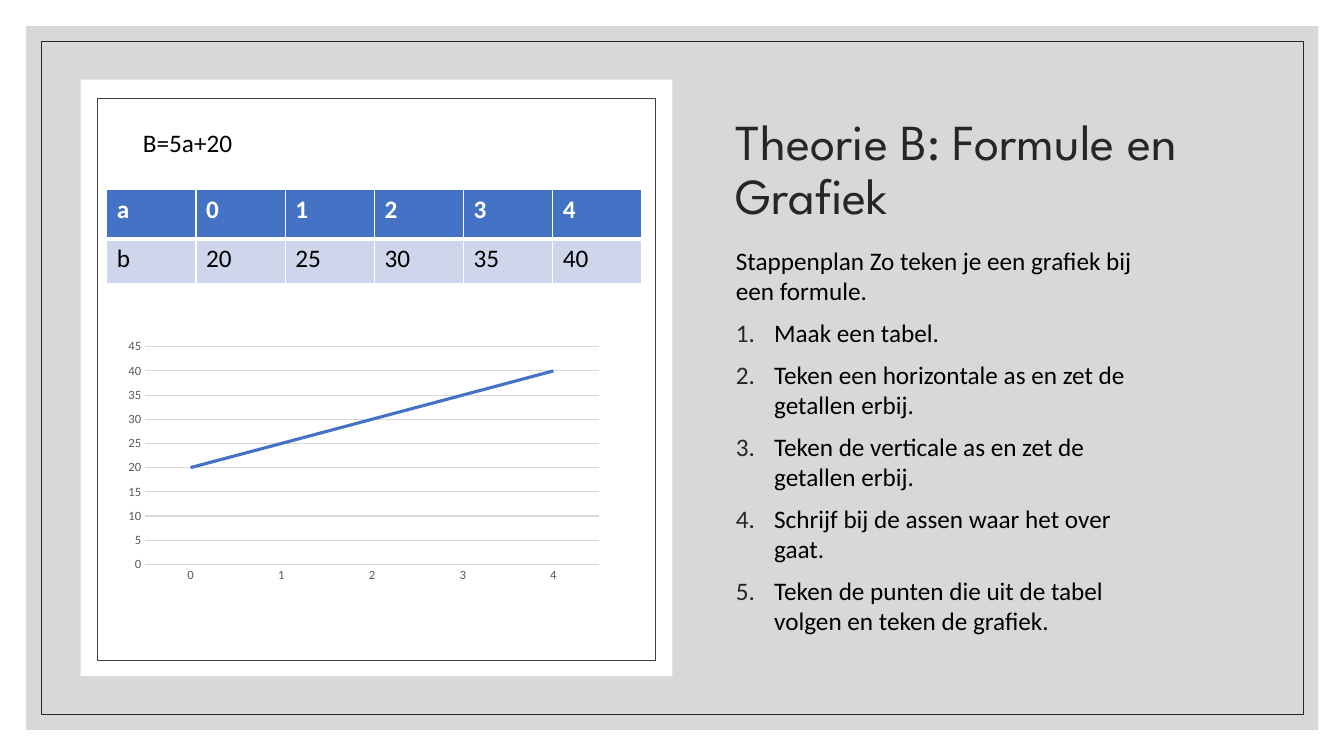
from dataclasses import dataclass

import lxml.etree
import pptx
import pptx.chart.data
import pptx.dml.color
import pptx.enum.chart
import pptx.enum.shapes
import pptx.enum.text
import pptx.oxml
import pptx.oxml.ns
import pptx.util

qn = pptx.oxml.ns.qn


@dataclass(frozen=True)
class Theme:
    heading_font: str = "League Spartan"
    font: str = "Calibri"
    title_size: int = 36
    text_size: int = 18
    axis_size: int = 9
    ink: str = "000000"
    dark: str = "262626"
    border: str = "404040"
    axis: str = "595959"
    grid: str = "D9D9D9"
    backdrop: str = "BFBFBF"
    white: str = "FFFFFF"
    accent: str = "4472C4"
    band: str = "CFD5EA"


def rgb(value):
    return pptx.dml.color.RGBColor.from_string(value)


class SlideBuilder:
    """Places elements by percentage of the slide's width and height."""

    def __init__(self, prs, theme):
        self.prs, self.theme = prs, theme
        self.s = prs.slides.add_slide(prs.slide_layouts[1])

    def x(self, share):
        return round(self.prs.slide_width * share / 100)

    def y(self, share):
        return round(self.prs.slide_height * share / 100)

    def box(self, left, top, width, height):
        return self.x(left), self.y(top), self.x(width), self.y(height)

    def run(self, p, text, size=None, color=None, font=None, bold=False):
        r = p.add_run()
        r.text = text
        r.font.size = pptx.util.Pt(size or self.theme.text_size)
        r.font.name = font or self.theme.font
        r.font.bold = bold
        r.font.color.rgb = rgb(color or self.theme.ink)

    def panel(self, area, fill=None, alpha=None, line=None):
        sp = self.s.shapes.add_shape(pptx.enum.shapes.MSO_SHAPE.RECTANGLE, *self.box(*area))
        sp.shadow.inherit = False
        if fill:
            sp.fill.solid()
            sp.fill.fore_color.rgb = rgb(fill)
        else:
            sp.fill.background()
        if alpha:
            color = sp.element.spPr.find(qn("a:solidFill")).find(qn("a:srgbClr"))
            lxml.etree.SubElement(color, qn("a:alpha"), val=str(alpha * 1000))
        if line:
            sp.line.color.rgb = rgb(line)
            sp.line.width = pptx.util.Pt(0.5)
        else:
            sp.line.fill.background()

    def placeholder(self, idx, area, anchor):
        sp = self.s.placeholders[idx]
        self.s.shapes.element.append(sp.element)  # bring in front of the panels
        sp.left, sp.top, sp.width, sp.height = self.box(*area)
        tf = sp.text_frame
        tf.word_wrap = True
        tf.auto_size = pptx.enum.text.MSO_AUTO_SIZE.NONE
        tf.vertical_anchor = anchor
        return tf

    def title(self, text, area):
        p = self.placeholder(0, area, pptx.enum.text.MSO_ANCHOR.MIDDLE).paragraphs[0]
        p.alignment = pptx.enum.text.PP_ALIGN.LEFT
        p.line_spacing = 0.9
        self.run(p, text, self.theme.title_size, self.theme.dark, self.theme.heading_font)

    def steps(self, intro, items, area):
        tf = self.placeholder(1, area, pptx.enum.text.MSO_ANCHOR.TOP)
        for i, text in enumerate([intro, *items]):
            p = tf.add_paragraph() if i else tf.paragraphs[0]
            p.space_before = pptx.util.Pt(9)
            p.line_spacing = 0.98
            self.run(p, text)
            indent = pptx.util.Inches(0.38) if i else 0
            pPr = p._p.get_or_add_pPr()
            pPr.set("marL", str(indent))
            pPr.set("indent", str(-indent))
            if i:
                color = lxml.etree.SubElement(pPr, qn("a:buClr"))
                lxml.etree.SubElement(color, qn("a:srgbClr"), val=self.theme.dark)
                lxml.etree.SubElement(pPr, qn("a:buFont"), typeface="+mj-lt")
                lxml.etree.SubElement(pPr, qn("a:buAutoNum"), type="arabicPeriod")
            else:
                lxml.etree.SubElement(pPr, qn("a:buNone"))

    def text(self, text, area):
        tf = self.s.shapes.add_textbox(*self.box(*area)).text_frame
        tf.word_wrap = True
        tf.auto_size = pptx.enum.text.MSO_AUTO_SIZE.SHAPE_TO_FIT_TEXT
        self.run(tf.paragraphs[0], text)

    def cell(self, cell, text, header):
        t = self.theme
        tcPr = cell._tc.get_or_add_tcPr()
        thick = "b" if header else "t"
        for side in "lrtb":
            width = pptx.util.Pt(3 if side == thick else 1)
            ln = lxml.etree.SubElement(tcPr, qn(f"a:ln{side.upper()}"), w=str(width))
            fill = lxml.etree.SubElement(ln, qn("a:solidFill"))
            lxml.etree.SubElement(fill, qn("a:srgbClr"), val=t.white)
        cell.fill.solid()
        cell.fill.fore_color.rgb = rgb(t.accent if header else t.band)
        self.run(cell.text_frame.paragraphs[0], text,
                 color=t.white if header else t.ink, bold=header)

    def table(self, rows, left, top, width, heights):
        area = self.box(left, top, width, sum(heights))
        table = self.s.shapes.add_table(len(rows), len(rows[0]), *area).table
        for i, (row, height) in enumerate(zip(rows, heights)):
            table.rows[i].height = self.y(height)
            for j, value in enumerate(row):
                self.cell(table.cell(i, j), str(value), header=i == 0)

    def line_chart(self, cats, values, area, plot_area):
        t, xl = self.theme, pptx.enum.chart
        data = pptx.chart.data.CategoryChartData()
        data.categories = [str(c) for c in cats]
        data.add_series("Series 1", values)
        chart = self.s.shapes.add_chart(xl.XL_CHART_TYPE.LINE, *self.box(*area), data).chart
        chart.has_legend = chart.has_title = False
        chart.font.size, chart.font.name = pptx.util.Pt(10), t.font
        chart.font.color.rgb = rgb(t.ink)
        chart.plots[0].vary_by_categories = False

        # Series line
        series = chart.plots[0].series[0]
        series.smooth = False
        series.marker.style = xl.XL_MARKER_STYLE.NONE
        series.format.line.color.rgb = rgb(t.accent)
        series.format.line.width = pptx.util.Pt(2.25)

        # Axes and gridlines
        cat, val = chart.category_axis, chart.value_axis
        for axis in (cat, val):
            axis.major_tick_mark = axis.minor_tick_mark = xl.XL_TICK_MARK.NONE
            font = axis.tick_labels.font
            font.size, font.name = pptx.util.Pt(t.axis_size), t.font
            font.color.rgb = rgb(t.axis)
        val.minimum_scale, val.maximum_scale, val.major_unit = 0, 45, 5
        val.format.line.fill.background()
        val.has_major_gridlines = True
        for line in (cat.format.line, val.major_gridlines.format.line):
            line.color.rgb = rgb(t.grid)
            line.width = pptx.util.Pt(0.75)

        # Inner plot area
        plot = chart.element.find(".//" + qn("c:plotArea"))
        for old in plot.findall(qn("c:layout")):
            plot.remove(old)
        layout = lxml.etree.Element(qn("c:layout"))
        manual = lxml.etree.SubElement(layout, qn("c:manualLayout"))
        settings = [("layoutTarget", "inner"), ("xMode", "edge"), ("yMode", "edge"),
                    *zip("xywh", plot_area)]
        for tag, value in settings:
            lxml.etree.SubElement(manual, qn(f"c:{tag}"), val=str(value))
        plot.insert(0, layout)


def main():
    prs = pptx.Presentation()
    prs.slide_width, prs.slide_height = pptx.util.Inches(13.33), pptx.util.Inches(7.5)
    theme = Theme()
    slide = SlideBuilder(prs, theme)

    # Backdrop and white card, each with a thin frame
    slide.panel((1.95, 3.47, 96.15, 93.07), fill=theme.backdrop, alpha=60)
    slide.panel((3.08, 5.47, 93.9, 89.07), line=theme.dark)
    slide.panel((6, 10.53, 44.03, 78.93), fill=theme.white)
    slide.panel((7.28, 13.07, 41.48, 74.27), line=theme.border)

    # Title and step-by-step plan
    slide.title("Theorie B: Formule en Grafiek", (54, 10.67, 40.65, 24))
    slide.steps("Stappenplan Zo teken je een grafiek bij een formule.", [
        "Maak een tabel.",
        "Teken een horizontale as en zet de getallen erbij.",
        "Teken de verticale as en zet de getallen erbij.",
        "Schrijf bij de assen waar het over gaat.",
        "Teken de punten die uit de tabel volgen en teken de grafiek.",
    ], (54, 32, 33.53, 57.47))

    # Formula, its table and its graph
    a_values = range(5)
    b_values = [5 * a + 20 for a in a_values]
    slide.text("B=5a+20", (9.9, 16.13, 38.85, 5.33))
    slide.table([["a", *a_values], ["b", *b_values]], 7.95, 25.07, 39.83, (6.53, 5.87))
    slide.line_chart(a_values, b_values, (8.18, 39.87, 37.5, 40), (0.07, 0.15, 0.9, 0.72))

    prs.save("out.pptx")


if __name__ == "__main__":
    main()
